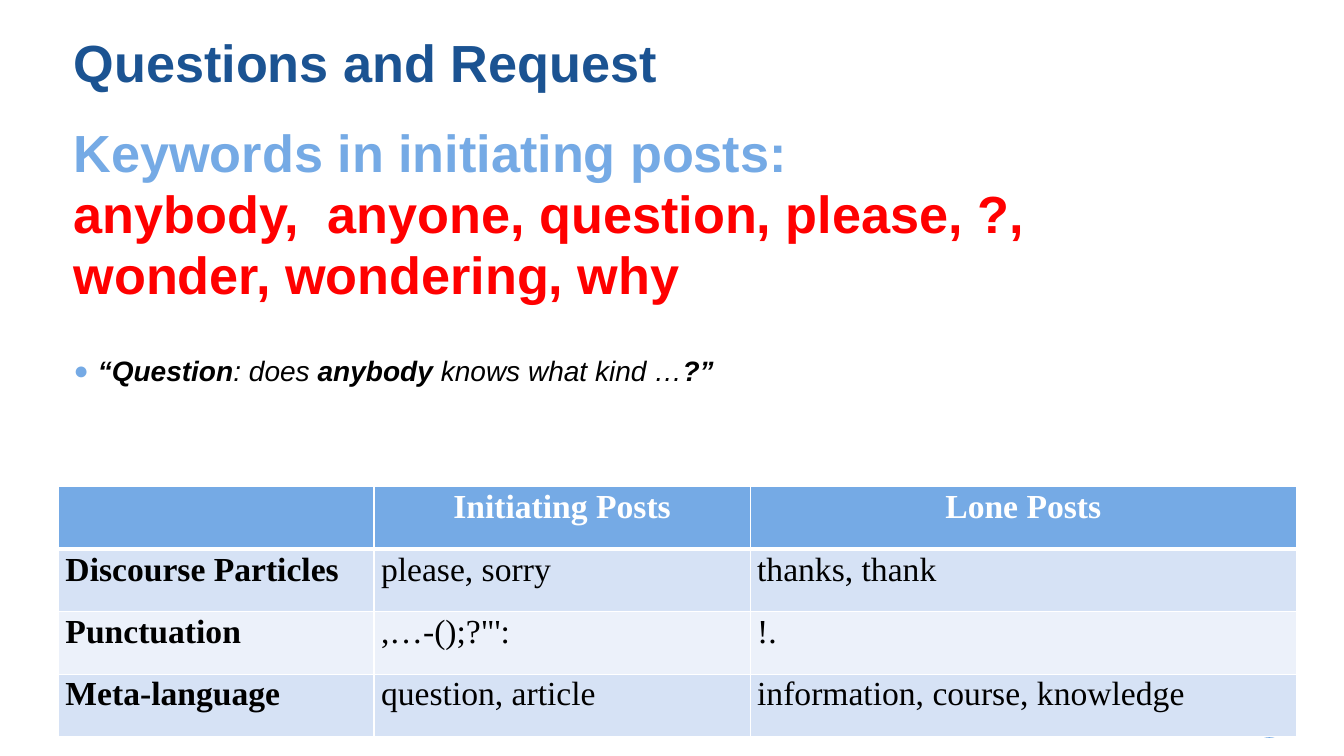
from lxml.etree import SubElement
from pptx import Presentation
from pptx.dml.color import RGBColor
from pptx.enum.shapes import MSO_SHAPE
from pptx.enum.text import MSO_ANCHOR, MSO_AUTO_SIZE, PP_ALIGN
from pptx.oxml.ns import qn
from pptx.util import Inches, Pt

NAVY, BLUE, RED = "1B5392", "75AAE5", "FF0000"
BLACK, WHITE = "000000", "FFFFFF"
BANDS = ["D6E2F5", "ECF1FA"]


def color(value):
    return RGBColor.from_string(value)


def add_solid_fill(parent, value):
    fill = SubElement(parent, qn("a:solidFill"))
    SubElement(fill, qn("a:srgbClr"), val=value)


class SlideBuilder:
    heading_font = "Arial"
    table_font = "Times New Roman"
    heading_size = 37.3
    heading_spacing = 43.5

    def __init__(self, deck):
        self.slide = deck.slides.add_slide(deck.slide_layouts[5])

    def span(self, para, text, size, value, font, bold=False, italic=False):
        run = para.add_run()
        run.text = text
        run.font.name = font
        run.font.size = Pt(size)
        run.font.bold = bold
        run.font.italic = italic
        run.font.color.rgb = color(value)

    def prepare(self, box):
        frame = box.text_frame
        frame.word_wrap = True
        frame.auto_size = MSO_AUTO_SIZE.NONE
        frame.vertical_anchor = MSO_ANCHOR.TOP
        frame.margin_left = frame.margin_right = 0
        frame.margin_top = frame.margin_bottom = 0
        return frame

    def text_box(self, left, top, width, height):
        box = self.slide.shapes.add_textbox(
            Inches(left), Inches(top), Inches(width), Inches(height))
        return self.prepare(box)

    def heading(self, para, text, value):
        para.alignment = PP_ALIGN.LEFT
        para.line_spacing = Pt(self.heading_spacing)
        self.span(para, text, self.heading_size, value, self.heading_font, bold=True)

    def title(self, text, left, top, width, height):
        box = self.slide.shapes.title
        box.left, box.top = Inches(left), Inches(top)
        box.width, box.height = Inches(width), Inches(height)
        self.heading(self.prepare(box).paragraphs[0], text, NAVY)

    def dot(self, left, top, width, height):
        shape = self.slide.shapes.add_shape(
            MSO_SHAPE.OVAL, Inches(left), Inches(top), Inches(width), Inches(height))
        shape.shadow.inherit = False
        shape.fill.solid()
        shape.fill.fore_color.rgb = color(BLUE)
        shape.line.fill.background()

    def bullet(self, para, spans, size):
        indent = Inches(0.24)
        properties = para._p.get_or_add_pPr()
        properties.set("marL", str(indent))
        properties.set("indent", str(-indent))
        bullet_color = SubElement(properties, qn("a:buClr"))
        SubElement(bullet_color, qn("a:srgbClr"), val=BLUE)
        SubElement(properties, qn("a:buSzPct"), val="90000")
        SubElement(properties, qn("a:buFont"), typeface=self.heading_font)
        SubElement(properties, qn("a:buChar"), char="●")
        for text, bold in spans:
            self.span(para, text, size, BLACK, self.heading_font, bold, italic=True)

    def cell(self, cell, text, fill, value, bold, centered, borders):
        # Borders come before the fill in the cell properties
        properties = cell._tc.get_or_add_tcPr()
        for side, width in borders.items():
            line = SubElement(properties, qn("a:ln" + side), w=str(Pt(width)))
            add_solid_fill(line, WHITE)
        cell.fill.solid()
        cell.fill.fore_color.rgb = color(fill)
        cell.vertical_anchor = MSO_ANCHOR.MIDDLE
        cell.margin_left = cell.margin_right = Inches(0.07)
        cell.margin_top = cell.margin_bottom = 0
        para = cell.text_frame.paragraphs[0]
        para.alignment = PP_ALIGN.CENTER if centered else PP_ALIGN.LEFT
        para.line_spacing = Pt(11)
        if text:
            self.span(para, text, 24, value, self.table_font, bold)

    def table(self, rows, left, top, widths, row_height):
        table = self.slide.shapes.add_table(
            len(rows), len(widths), Inches(left), Inches(top),
            Inches(sum(widths)), Inches(row_height * len(rows))).table
        for column, width in zip(table.columns, widths):
            column.width = Inches(width)
        for r, row in enumerate(rows):
            table.rows[r].height = Inches(row_height)
            header = r == 0
            borders = {"L": 1, "R": 1, "T": 3 if r == 1 else 1, "B": 3 if header else 1}
            fill = BLUE if header else BANDS[(r - 1) % 2]
            for c, text in enumerate(row):
                self.cell(table.cell(r, c), text, fill, WHITE if header else BLACK,
                          header or c == 0, header, borders)


def main():
    deck = Presentation()
    deck.slide_width, deck.slide_height = Inches(13.33), Inches(7.5)
    page = SlideBuilder(deck)

    # Page number dot and title
    page.dot(12.44, 7.09, 0.3, 0.23)
    page.title("Questions and Request", 0.73, 0.32, 9.78, 0.81)

    # Example post
    example = page.text_box(0.73, 3.51, 11.97, 1.2)
    page.bullet(example.paragraphs[0], [
        ("“Question", True), (": does ", False), ("anybody", True),
        (" knows what kind …", False), ("?”", True)], 20)

    # Keywords
    keywords = page.text_box(0.73, 1.21, 9.63, 1.85)
    page.heading(keywords.paragraphs[0], "Keywords in initiating posts:", BLUE)
    page.heading(keywords.add_paragraph(),
                 "anybody,  anyone, question, please, ?, wonder, wondering, why", RED)

    # Comparison of posts
    page.table([
        ["", "Initiating Posts", "Lone Posts"],
        ["Discourse Particles", "please, sorry", "thanks, thank"],
        ["Punctuation", ",…-();?\"':", "!."],
        ["Meta-language", "question, article", "information, course, knowledge"],
    ], 0.58, 4.83, [3.13, 3.73, 5.42], 0.62)

    deck.save("out.pptx")


if __name__ == "__main__":
    main()
